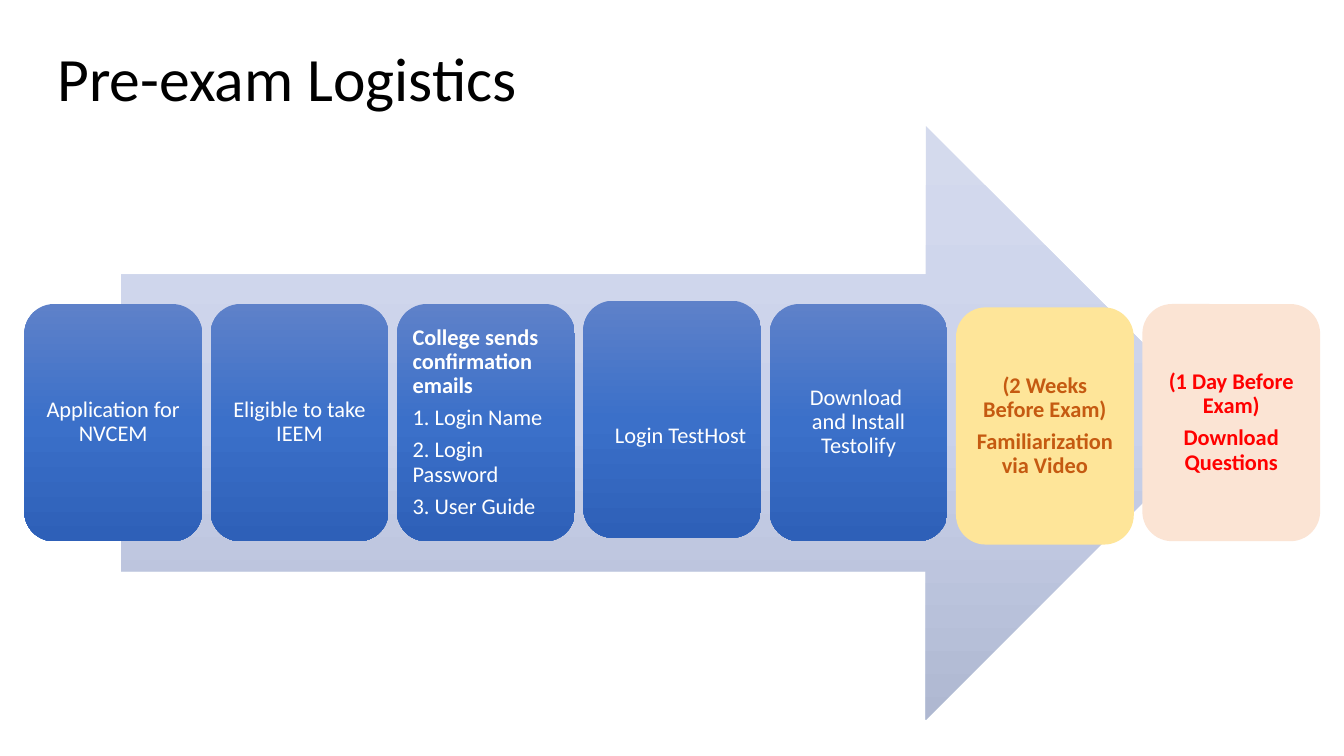
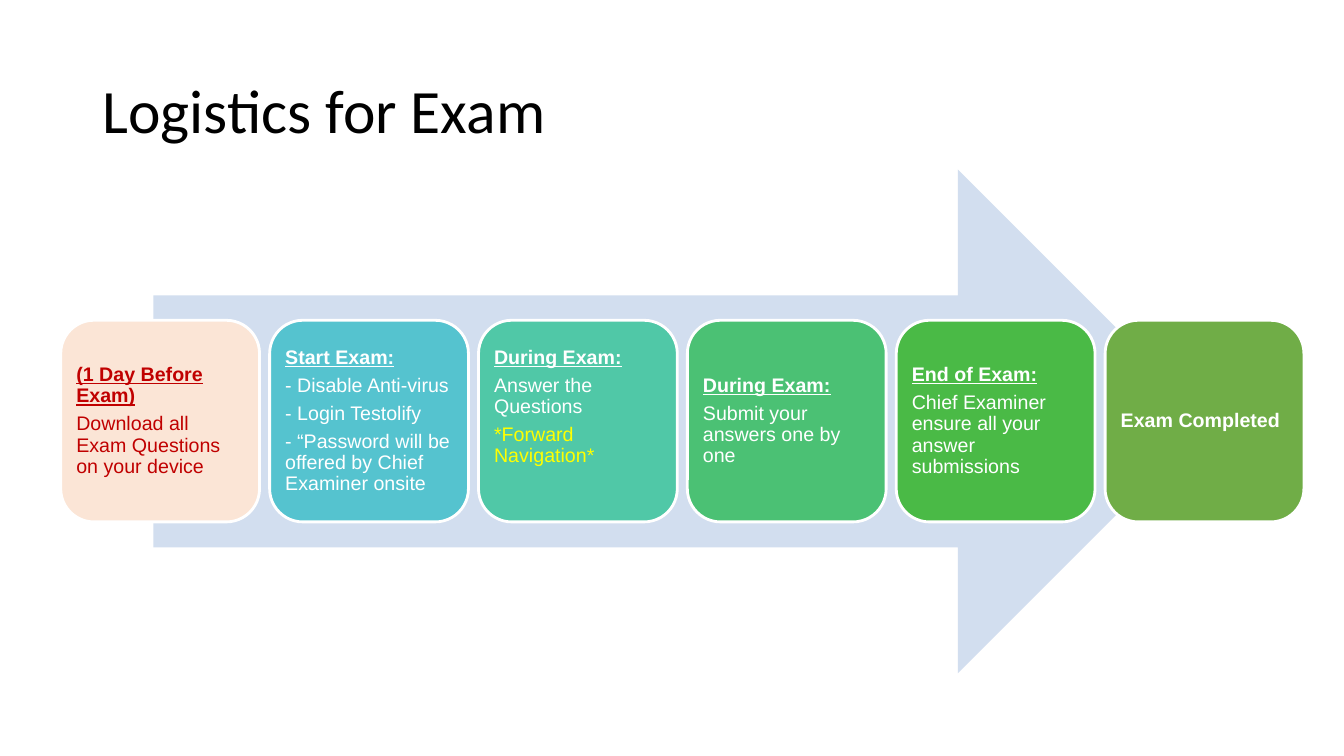
import copy
from dataclasses import dataclass
from typing import Optional

import pptx
import pptx.dml.color
import pptx.enum.shapes
import pptx.enum.text
import pptx.oxml.ns
import pptx.util

Pt = pptx.util.Pt
RGBColor = pptx.dml.color.RGBColor
Align = pptx.enum.text.PP_ALIGN
ShapeType = pptx.enum.shapes.MSO_SHAPE

# Colours
BLACK = RGBColor(0x00, 0x00, 0x00)
WHITE = RGBColor(0xFF, 0xFF, 0xFF)
YELLOW = RGBColor(0xFF, 0xFF, 0x00)
RED = RGBColor(0xFF, 0x00, 0x00)
DARK_RED = RGBColor(0xC0, 0x00, 0x00)
BROWN = RGBColor(0xC5, 0x5A, 0x11)
SAND = RGBColor(0xFE, 0xE5, 0x99)
PEACH = RGBColor(0xFB, 0xE4, 0xD4)
LIGHT_PEACH = RGBColor(0xFB, 0xE5, 0xD6)
PALE_BLUE = RGBColor(0xD2, 0xDE, 0xEF)
TURQUOISE = RGBColor(0x55, 0xC3, 0xCF)
SEA_GREEN = RGBColor(0x50, 0xC8, 0xA7)
EMERALD = RGBColor(0x4B, 0xC1, 0x74)
GREEN = RGBColor(0x4A, 0xBA, 0x46)
OLIVE = RGBColor(0x70, 0xAD, 0x47)

# A fill is a tuple: one colour is solid, several run from top to bottom
Fill = tuple[RGBColor, ...]
BLUE_SHADE: Fill = (
    RGBColor(0x5E, 0x81, 0xC9), RGBColor(0x3B, 0x70, 0xC9), RGBColor(0x2E, 0x60, 0xB8))
ARROW_SHADE: Fill = (
    RGBColor(0xD4, 0xDA, 0xED), RGBColor(0xCA, 0xD2, 0xEB), RGBColor(0xAF, 0xB8, 0xD1))

TITLE_FONT = "Calibri"
TITLE_SIZE = 44
LINE_SPACING = 0.9


@dataclass(frozen=True)
class Box:
    left: float
    top: float
    width: float
    height: float


@dataclass(frozen=True)
class Line:
    text: str
    bold: bool = False
    underline: bool = False
    color: Optional[RGBColor] = None
    gap: bool = True


@dataclass(frozen=True)
class Step:
    fill: Fill
    lines: tuple[Line, ...]
    color: RGBColor = WHITE
    align: Align = Align.LEFT
    shift: float = 0
    # Extra insets: left, top, right, bottom
    extra: tuple[float, float, float, float] = (0, 0, 0, 0)


@dataclass(frozen=True)
class Flow:
    title: str
    title_box: Box
    arrow_box: Box
    arrow_fill: Fill
    first_card: Box
    pitch: float
    font: str
    size: float
    inset: float
    space_before: float
    space_after: float
    outlined: bool
    steps: tuple[Step, ...]


def heading(text: str) -> Line:
    return Line(text, bold=True, underline=True)


PRE_EXAM = Flow(
    title="Pre-exam Logistics",
    title_box=Box(33.8, 16.5, 890.6, 83.5),
    arrow_box=Box(86.4, 90, 787, 424),
    arrow_fill=ARROW_SHADE,
    first_card=Box(17.4, 217.2, 127, 169.4),
    pitch=133.1,
    font="Calibri", size=16, inset=5, space_before=5.6, space_after=0, outlined=False,
    steps=(
        Step(BLUE_SHADE, (Line("Application for NVCEM"),), align=Align.CENTER),
        Step(BLUE_SHADE, (Line("Eligible to take IEEM"),), align=Align.CENTER),
        Step(BLUE_SHADE, (
            Line("College sends confirmation emails", bold=True),
            Line("1. Login Name"),
            Line("2. Login Password"),
            Line("3. User Guide"))),
        Step(BLUE_SHADE, (Line("Login TestHost"),), align=Align.CENTER,
             shift=-2.4, extra=(7, 19, -5, -5)),
        Step(BLUE_SHADE, (Line("Download "), Line("and Install Testolify", gap=False)),
             align=Align.CENTER),
        Step((SAND,), (
            Line("(2 Weeks Before Exam)", bold=True),
            Line("Familiarization via Video", bold=True)),
             color=BROWN, align=Align.CENTER, shift=2.4),
        Step((PEACH,), (
            Line("(1 Day Before Exam)", bold=True),
            Line("Download Questions", bold=True)),
             color=RED, align=Align.CENTER),
    ),
)

EXAM = Flow(
    title="Logistics for Exam",
    title_box=Box(66, 28.8, 828, 104.4),
    arrow_box=Box(109.6, 121, 754.6, 360),
    arrow_fill=(PALE_BLUE,),
    first_card=Box(43.4, 228.8, 142, 144),
    pitch=149.2,
    font="Arial", size=14, inset=4.2, space_before=0, space_after=4.9, outlined=True,
    steps=(
        Step((LIGHT_PEACH,), (
            heading("(1 Day Before Exam)"),
            Line("Download all Exam Questions on your device")), color=DARK_RED),
        Step((TURQUOISE,), (
            heading("Start Exam:"),
            Line("- Disable Anti-virus"),
            Line("- Login Testolify"),
            Line("- “Password will be offered by Chief Examiner onsite"))),
        Step((SEA_GREEN,), (
            heading("During Exam:"),
            Line("Answer the Questions"),
            Line("*Forward Navigation*", color=YELLOW)), extra=(0, 0, 0, 20)),
        Step((EMERALD,), (
            heading("During Exam:"),
            Line("Submit your answers one by one"))),
        Step((GREEN,), (
            heading("End of Exam:"),
            Line("Chief Examiner ensure all your answer submissions"))),
        Step((OLIVE,), (Line("Exam Completed", bold=True),)),
    ),
)


def place(shape: pptx.shapes.base.BaseShape, box: Box) -> None:
    shape.left, shape.top = Pt(box.left), Pt(box.top)
    shape.width, shape.height = Pt(box.width), Pt(box.height)


def apply_fill(shape: pptx.shapes.autoshape.Shape, colors: Fill) -> None:
    if len(colors) == 1:
        shape.fill.solid()
        shape.fill.fore_color.rgb = colors[0]
        return
    shape.fill.gradient()
    shape.fill.gradient_angle = 270
    # Extend the two default stops to one per colour
    stop_list = next(shape.element.iter(pptx.oxml.ns.qn("a:gsLst")))
    for _ in colors[2:]:
        stop_list.append(copy.deepcopy(stop_list[0]))
    for index, (stop, color) in enumerate(zip(shape.fill.gradient_stops, colors)):
        stop.color.rgb = color
        stop.position = index / (len(colors) - 1)


def add_block(slide: pptx.slide.Slide, kind: ShapeType, box: Box,
              fill: Fill) -> pptx.shapes.autoshape.Shape:
    shape = slide.shapes.add_shape(
        kind, Pt(box.left), Pt(box.top), Pt(box.width), Pt(box.height))
    shape.shadow.inherit = False
    shape.line.fill.background()
    apply_fill(shape, fill)
    return shape


def add_title(slide: pptx.slide.Slide, text: str, box: Box) -> None:
    title = slide.shapes.title
    place(title, box)
    title.text_frame.vertical_anchor = pptx.enum.text.MSO_ANCHOR.MIDDLE
    paragraph = title.text_frame.paragraphs[0]
    paragraph.alignment = Align.LEFT
    paragraph.line_spacing = LINE_SPACING
    run = paragraph.add_run()
    run.text = text
    run.font.name, run.font.size = TITLE_FONT, Pt(TITLE_SIZE)
    run.font.color.rgb = BLACK


def write_lines(shape: pptx.shapes.autoshape.Shape, flow: Flow, step: Step) -> None:
    frame = shape.text_frame
    frame.word_wrap = True
    frame.vertical_anchor = pptx.enum.text.MSO_ANCHOR.MIDDLE
    frame.margin_left, frame.margin_top, frame.margin_right, frame.margin_bottom = (
        Pt(flow.inset + extra) for extra in step.extra)
    for index, line in enumerate(step.lines):
        paragraph = frame.add_paragraph() if index else frame.paragraphs[0]
        paragraph.alignment = step.align
        paragraph.line_spacing = LINE_SPACING
        paragraph.space_before = Pt(flow.space_before if index and line.gap else 0)
        paragraph.space_after = Pt(flow.space_after)
        run = paragraph.add_run()
        run.text = line.text
        run.font.name, run.font.size = flow.font, Pt(flow.size)
        run.font.bold, run.font.underline = line.bold, line.underline
        run.font.color.rgb = line.color or step.color


def add_flow(presentation: pptx.presentation.Presentation, flow: Flow) -> None:
    slide = presentation.slides.add_slide(presentation.slide_layouts[5])
    add_title(slide, flow.title, flow.title_box)
    # Arrow behind the cards
    add_block(slide, ShapeType.RIGHT_ARROW, flow.arrow_box, flow.arrow_fill)
    # Evenly spaced cards
    first = flow.first_card
    for index, step in enumerate(flow.steps):
        box = Box(first.left + index * flow.pitch, first.top + step.shift,
                  first.width, first.height)
        card = add_block(slide, ShapeType.ROUNDED_RECTANGLE, box, step.fill)
        if flow.outlined:
            card.line.color.rgb = WHITE
            card.line.width = Pt(2)
        write_lines(card, flow, step)


def main() -> None:
    presentation = pptx.Presentation()
    presentation.slide_width, presentation.slide_height = Pt(960), Pt(540)
    for flow in (PRE_EXAM, EXAM):
        add_flow(presentation, flow)
    presentation.save("out.pptx")


if __name__ == "__main__":
    main()
